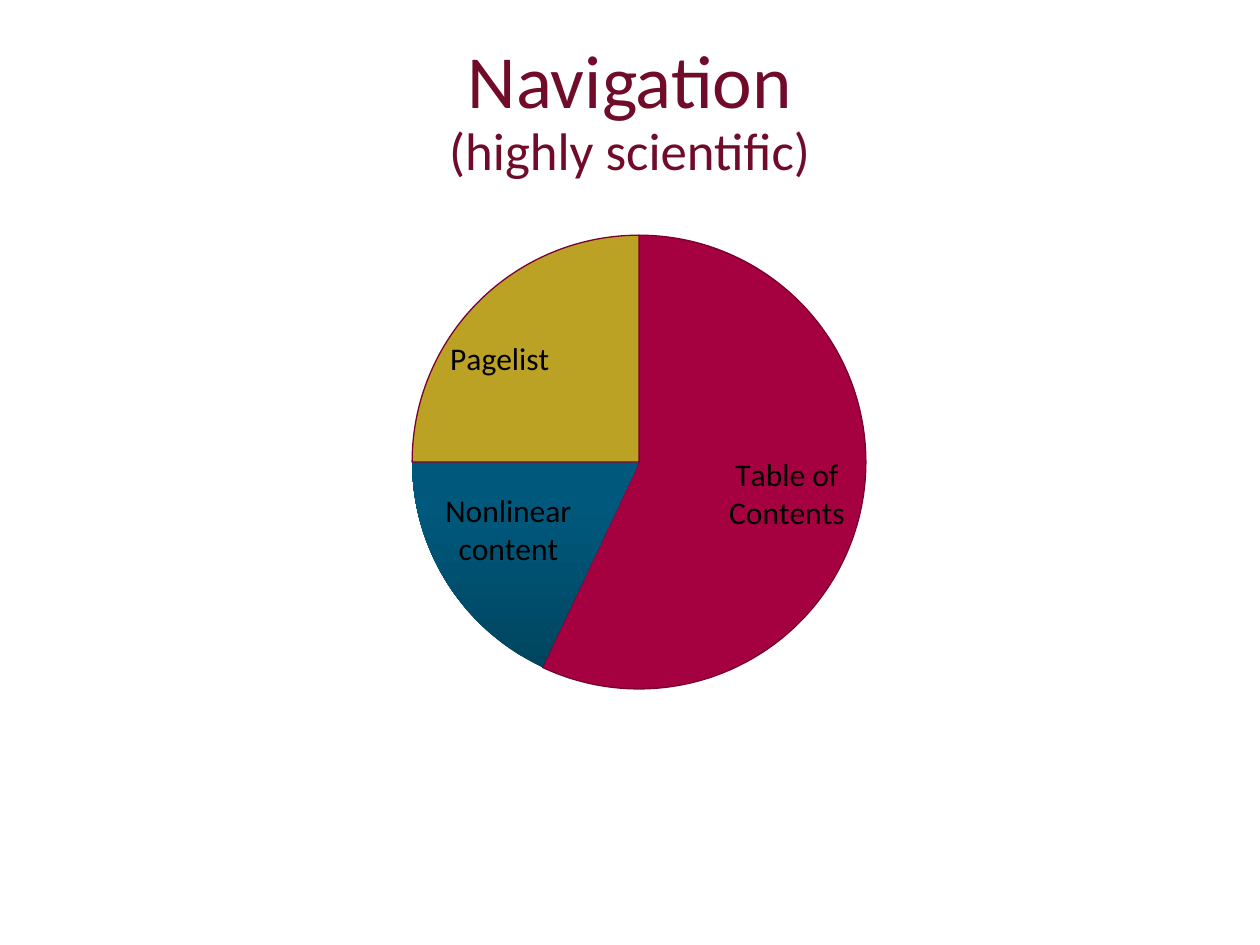
from lxml import etree
from pptx import Presentation
from pptx.chart.data import CategoryChartData
from pptx.dml.color import RGBColor
from pptx.enum.chart import XL_CHART_TYPE, XL_LABEL_POSITION
from pptx.enum.text import MSO_ANCHOR, PP_ALIGN
from pptx.oxml import parse_xml
from pptx.oxml.ns import nsdecls
from pptx.util import Inches, Pt

PIE = XL_CHART_TYPE.PIE
INSIDE = XL_LABEL_POSITION.INSIDE_END
MIDDLE = MSO_ANCHOR.MIDDLE
CENTER = PP_ALIGN.CENTER

WINE = RGBColor(0x70, 0x0B, 0x2A)
EDGE = RGBColor(0x7A, 0x00, 0x30)
RED = RGBColor(0xA5, 0x00, 0x3F)
GOLD = RGBColor(0xBC, 0xA2, 0x24)
NAVY = RGBColor(0x00, 0x45, 0x60)
BLUE = RGBColor(0x00, 0x59, 0x7C)
TEAL = RGBColor(0x00, 0x5A, 0x7D)
BLACK = RGBColor(0, 0, 0)

# Name: value, paint, label shift as fractions of the chart
SHARES = {
    "Table of Contents": (57, RED, (-0.01, 0.04)),
    "Nonlinear content": (18, [(0, NAVY), (80, BLUE), (100, TEAL)], (-0.01, -0.02)),
    "Pagelist": (25, GOLD, (-0.04, 0.06)),
}


def layout(marks):
    """Make a manual chart layout from tag and value pairs."""
    item = parse_xml(f'<c:layout {nsdecls("c")}><c:manualLayout/></c:layout>')
    for tag, value in marks.items():
        name = etree.QName(item.nsmap["c"], tag)
        etree.SubElement(item[0], name).set("val", str(value))
    return item


class Deck:
    def __init__(self, slide, face="Calibri"):
        self.slide = slide
        self.face = face

    def style(self, font, size, color):
        for name, value in {"name": self.face, "size": Pt(size)}.items():
            setattr(font, name, value)
        font.color.rgb = color

    def title(self, box, lines):
        """Stack (text, size) lines in one centred paragraph."""
        frame = self.slide.shapes.add_textbox(*map(Inches, box)).text_frame
        looks = {"word_wrap": True, "vertical_anchor": MIDDLE,
                 "margin_bottom": Inches(0.11)}
        for name, value in looks.items():
            setattr(frame, name, value)
        para = frame.paragraphs[0]
        for name, value in {"alignment": CENTER, "line_spacing": 0.9}.items():
            setattr(para, name, value)
        for index, (text, size) in enumerate(lines):
            if index:
                para.add_line_break()
            run = para.add_run()
            run.text = text
            self.style(run.font, size, WINE)

    def pie(self, box, shares, plot):
        data = CategoryChartData()
        data.categories = list(shares)
        data.add_series("Series 1", [share[0] for share in shares.values()])
        frame = self.slide.shapes.add_chart(PIE, *map(Inches, box), data)
        chart = frame.chart
        for name in ("has_title", "has_legend"):
            setattr(chart, name, False)
        self.style(chart.font, 18, BLACK)
        self.place(chart, plot)
        series = chart.plots[0].series[0]
        labels = series.data_labels
        flags = {"show_category_name": True, "show_value": False,
                 "show_percentage": False, "position": INSIDE}
        for name, value in flags.items():
            setattr(labels, name, value)
        self.style(labels.font, 18, BLACK)
        for index, (_, paint, shift) in enumerate(shares.values()):
            point = series.points[index]
            self.slice(point.format, paint)
            self.label(point.data_label, shift)
        return chart

    def label(self, label, shift):
        """Show the category name, moved from its usual spot."""
        self.style(label.font, 18, BLACK)
        label.position = INSIDE
        item = label._dLbl
        for tag, value in {"showVal": "0", "showCatName": "1"}.items():
            item.find("c:" + tag, item.nsmap).set("val", value)
        item.insert(1, layout(dict(zip("xy", shift))))

    def slice(self, look, paint):
        """Fill with a colour and edge, or with upward gradient stops."""
        if isinstance(paint, RGBColor):
            look.fill.solid()
            look.fill.fore_color.rgb = paint
            look.line.color.rgb = EDGE
            look.line.width = Pt(0.75)
            return
        look.line.fill.background()
        look.fill.gradient()
        look.fill.gradient_angle = 90
        parent = look.fill.gradient_stops[0]._gs.getparent()
        for stop in list(parent):
            parent.remove(stop)
        for spot, color in paint:
            parent.append(parse_xml(
                f'<a:gs {nsdecls("a")} pos="{spot * 1000}">'
                f'<a:srgbClr val="{color}"/></a:gs>'))

    def place(self, chart, plot):
        """Fix the plot area, given as fractions of the chart."""
        area = chart._chartSpace.chart.plotArea
        for old in area.findall("c:layout", area.nsmap):
            area.remove(old)
        marks = {"layoutTarget": "inner", "xMode": "edge", "yMode": "edge"}
        marks.update(zip("xywh", plot))
        area.insert(0, layout(marks))


def main():
    show = Presentation()
    show.slide_width, show.slide_height = Inches(10), Inches(7.5)
    deck = Deck(show.slides.add_slide(show.slide_layouts[6]))
    deck.title((0.5, 0.3, 9, 1.25),
               [("Navigation", 42.9), ("(highly scientific)", 30.2)])
    deck.pie((1.67, 1.67, 6.67, 4.44), SHARES, (0.24, 0.04, 0.54, 0.82))
    show.save("out.pptx")


if __name__ == "__main__":
    main()
